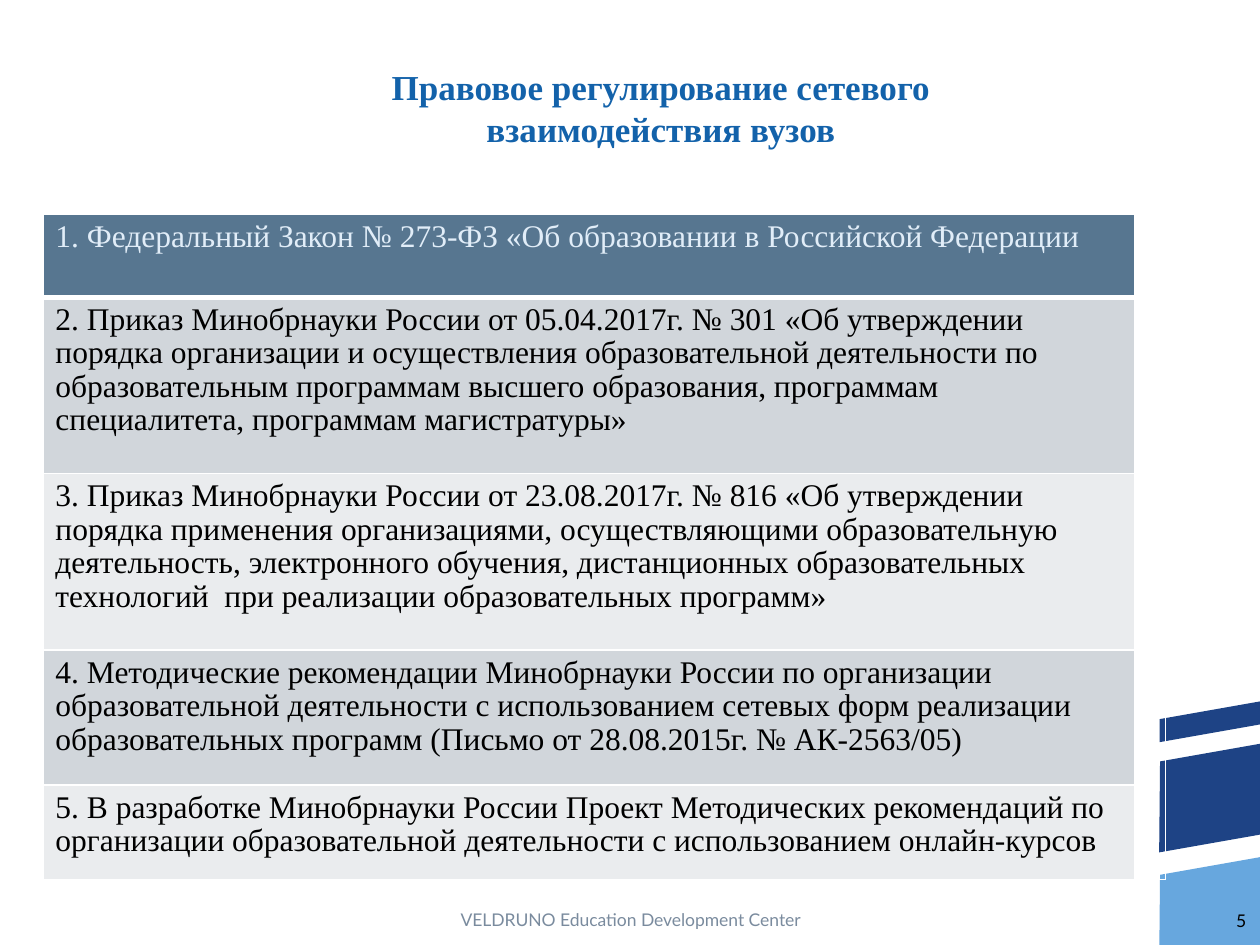
"""Build a slide with a table of legal acts on university networking."""
from dataclasses import dataclass

from lxml import etree
from pptx import Presentation
from pptx.dml.color import RGBColor
from pptx.enum.shapes import MSO_SHAPE
from pptx.enum.text import MSO_ANCHOR, PP_ALIGN
from pptx.oxml.ns import qn
from pptx.util import Inches, Pt

PARALLELOGRAM = MSO_SHAPE.PARALLELOGRAM
TOP, MIDDLE, BOTTOM = MSO_ANCHOR.TOP, MSO_ANCHOR.MIDDLE, MSO_ANCHOR.BOTTOM
LEFT, CENTER, RIGHT = PP_ALIGN.LEFT, PP_ALIGN.CENTER, PP_ALIGN.RIGHT


@dataclass(frozen=True)
class Theme:
    """Colours, fonts and type sizes."""
    white: str = "FFFFFF"
    black: str = "000000"
    navy: str = "1E4385"
    sky: str = "67A7DE"
    title: str = "1362AA"
    footer: str = "7A8B9E"
    head_fill: str = "577690"
    head_text: str = "E1EDF8"
    bands: tuple[str, str] = ("D1D6DB", "EAECEE")
    serif: str = "Times New Roman"
    sans: str = "Lato"
    title_size: int = 20
    body_size: int = 18
    small_size: int = 10


@dataclass(frozen=True)
class Stripe:
    """A slanted bar in the corner."""
    left: float
    top: float
    width: float
    height: float
    color: str


@dataclass(frozen=True)
class Act:
    """A table row with its height."""
    text: str
    height: float


THEME = Theme()
STRIPES = [
    Stripe(9.13, 5.97, 1.04, 0.71, THEME.navy),
    Stripe(9.18, 5.63, 0.94, 0.18, THEME.navy),
    Stripe(9.13, 6.87, 1.04, 0.71, THEME.sky),
]
ACTS = [
    Act("1. Федеральный Закон № 273-ФЗ «Об образовании в Российской Федерации", 0.66),
    Act("2. Приказ Минобрнауки России от 05.04.2017г. № 301 «Об утверждении "
        "порядка организации и осуществления образовательной деятельности по "
        "образовательным программам высшего образования, программам "
        "специалитета, программам магистратуры»", 1.4),
    Act("3. Приказ Минобрнауки России от 23.08.2017г. № 816 «Об утверждении "
        "порядка применения организациями, осуществляющими образовательную "
        "деятельность, электронного обучения, дистанционных образовательных "
        "технологий  при реализации образовательных программ»", 1.4),
    Act("4. Методические рекомендации Минобрнауки России по организации "
        "образовательной деятельности с использованием сетевых форм реализации "
        "образовательных программ (Письмо от 28.08.2015г. № АК-2563/05)", 1.07),
    Act("5. В разработке Минобрнауки России Проект Методических рекомендаций по "
        "организации образовательной деятельности с использованием онлайн-курсов", 0.75),
]
COLUMNS = (8.67, 0.24)


def write(tf, text: str, *, size: int, color: str, font: str, bold: bool = False,
          align=LEFT, spacing: float = 1.0) -> None:
    """Put formatted text into a text frame."""
    tf.word_wrap = True
    p = tf.paragraphs[0]
    p.alignment = align
    p.line_spacing = spacing
    p.space_before = Pt(0)
    r = p.add_run()
    r.text = text
    r.font.size = Pt(size)
    r.font.name = font
    r.font.bold = bold
    r.font.color.rgb = RGBColor.from_string(color)


def add_stripe(s, stripe: Stripe) -> None:
    """Draw one slanted bar."""
    sp = s.shapes.add_shape(PARALLELOGRAM, Inches(stripe.left), Inches(stripe.top),
                            Inches(stripe.width), Inches(stripe.height))
    sp.adjustments[0] = 0.187
    sp.rotation = 350
    sp.shadow.inherit = False
    sp.fill.solid()
    sp.fill.fore_color.rgb = RGBColor.from_string(stripe.color)
    sp.line.fill.background()


def add_label(s, text: str, left: float, top: float, width: float, *,
              color: str, align) -> None:
    """Add a small line of text at the foot of the slide."""
    sp = s.shapes.add_textbox(Inches(left), Inches(top), Inches(width), Inches(0.36))
    sp.text_frame.vertical_anchor = MIDDLE
    write(sp.text_frame, text, size=THEME.small_size, color=color,
          font=THEME.sans, align=align)


def set_borders(cell, bottom: int) -> None:
    """Give a cell white borders, with its own bottom width in points."""
    tc_pr = cell._tc.get_or_add_tcPr()
    for i, (side, width) in enumerate((("L", 1), ("R", 1), ("T", 1), ("B", bottom))):
        ln = etree.Element(qn(f"a:ln{side}"), w=str(Pt(width)))
        fill = etree.SubElement(ln, qn("a:solidFill"))
        etree.SubElement(fill, qn("a:srgbClr"), val=THEME.white)
        tc_pr.insert(i, ln)


def add_acts(s, acts: list[Act]) -> None:
    """Add the table of acts with a narrow empty column at the right."""
    height = sum(act.height for act in acts)
    table = s.shapes.add_table(len(acts), len(COLUMNS), Inches(0.34), Inches(1.7),
                               Inches(sum(COLUMNS)), Inches(height)).table
    table.first_row = table.horz_banding = False
    for column, width in zip(table.columns, COLUMNS):
        column.width = Inches(width)
    for i, act in enumerate(acts):
        table.rows[i].height = Inches(act.height)
        cell, spare = table.cell(i, 0), table.cell(i, 1)
        cell.fill.solid()
        fill = THEME.bands[(i - 1) % 2] if i else THEME.head_fill
        cell.fill.fore_color.rgb = RGBColor.from_string(fill)
        spare.fill.background()
        cell.vertical_anchor = TOP
        write(cell.text_frame, act.text, size=THEME.body_size, font=THEME.serif,
              color=THEME.black if i else THEME.head_text, spacing=0.96)
        for c in (cell, spare):
            set_borders(c, 1 if i else 3)
    table.cell(1, 1).merge(table.cell(len(acts) - 1, 1))


def add_title(s, text: str) -> None:
    """Place and format the title."""
    sp = s.shapes.title
    sp.left, sp.top, sp.width, sp.height = map(Inches, (2.26, 0.52, 5.97, 0.71))
    tf = sp.text_frame
    tf.margin_left = tf.margin_right = tf.margin_top = tf.margin_bottom = Inches(0.04)
    tf.vertical_anchor = BOTTOM
    write(tf, text, size=THEME.title_size, color=THEME.title, font=THEME.serif,
          bold=True, align=CENTER)


def main() -> None:
    """Build and save the slide."""
    prs = Presentation()
    prs.slide_width, prs.slide_height = Inches(10), Inches(7.5)
    s = prs.slides.add_slide(prs.slide_layouts[5])
    for stripe in STRIPES:
        add_stripe(s, stripe)
    add_label(s, "VELDRUNO Education Development Center", 3.42, 7.12, 3.17,
              color=THEME.footer, align=CENTER)
    add_label(s, "5", 9.42, 7.13, 0.57, color=THEME.black, align=RIGHT)
    add_title(s, "Правовое регулирование сетевого взаимодействия вузов")
    add_acts(s, ACTS)
    prs.save("out.pptx")


if __name__ == "__main__":
    main()
